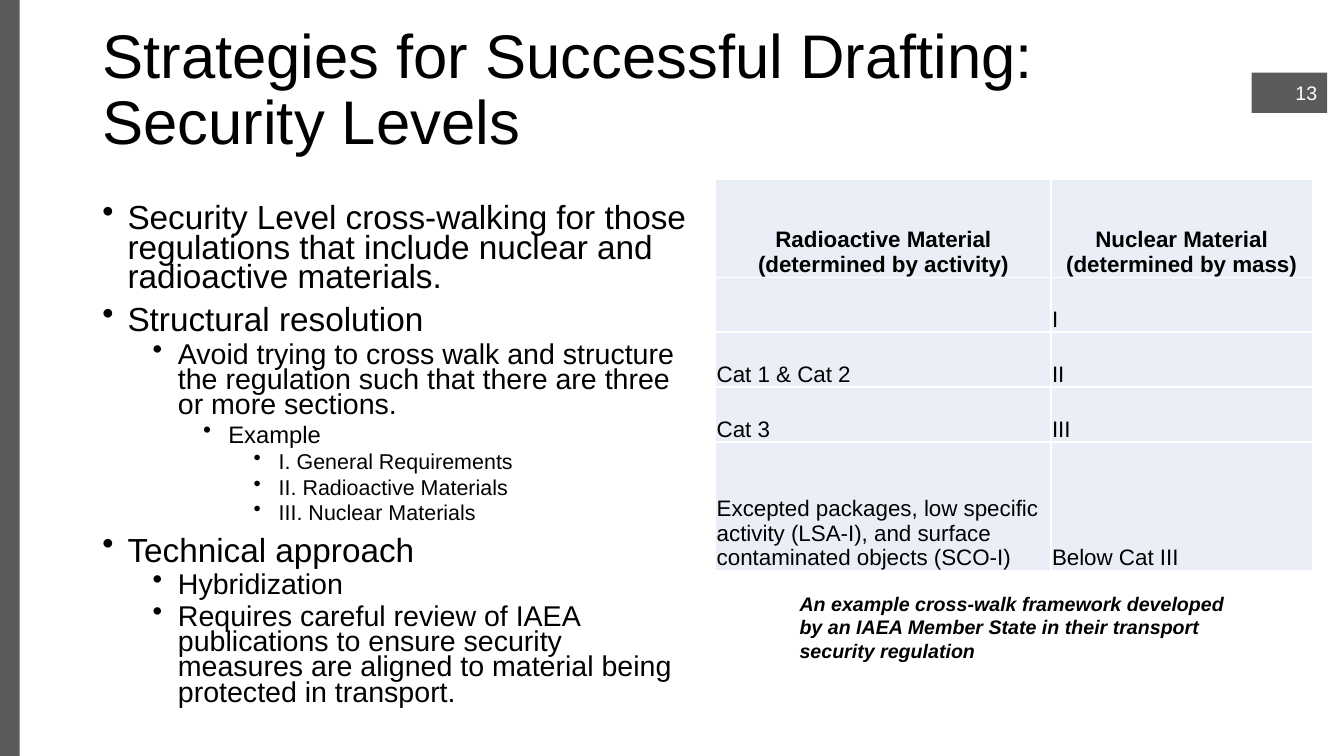
import pptx
import pptx.util
import pptx.dml.color
import pptx.enum.shapes
import pptx.enum.text
import pptx.oxml
import pptx.oxml.ns
from pptx.util import Pt

TITLE = "Strategies for Successful Drafting:\vSecurity Levels"
BULLETS = [
    (0, "Security Level cross-walking for those regulations that include nuclear and radioactive materials."),
    (0, "Structural resolution"),
    (1, "Avoid trying to cross walk and structure the regulation such that there are three or more sections."),
    (2, "Example"),
    (3, "I. General Requirements"),
    (3, "II. Radioactive Materials"),
    (3, "III. Nuclear Materials"),
    (0, "Technical approach"),
    (1, "Hybridization"),
    (1, "Requires careful review of IAEA publications to ensure security measures "
        "are aligned to material being protected in transport."),
]
CROSSWALK = [
    ("Radioactive Material\n(determined by activity)", "Nuclear Material (determined by mass)"),
    ("", "I"),
    ("Cat 1 & Cat 2", "II"),
    ("Cat 3", "III"),
    ("Excepted packages, low specific activity (LSA-I), and surface contaminated objects (SCO-I)",
     "Below Cat III"),
]
CAPTION = ("An example cross-walk framework developed by an IAEA Member State "
           "in their transport security regulation")
PAGE_NUMBER = "13"

COLORS = {"text": "000000", "gray": "5B5B5B", "white": "FFFFFF", "cell": "EAEFF7"}
BULLET_SIZES = [23.8, 20.4, 17, 15.3]
COLUMN_WIDTHS = [239.5, 186.5]
ROW_HEIGHTS = [69.5, 39.25, 39.25, 39.25, 92]
SLIDE_WIDTH, SLIDE_HEIGHT = 960, 540
ALIGN = pptx.enum.text.PP_ALIGN
ANCHOR = pptx.enum.text.MSO_ANCHOR


def color(name):
    return pptx.dml.color.RGBColor.from_string(COLORS[name])


def set_all(target, values):
    for name, value in values.items():
        setattr(target, name, value)


def format_paragraph(paragraph, size, color_name="text", font=None, **values):
    set_all(paragraph, values)
    set_all(paragraph.font, {"name": "Arial", "size": Pt(size), **(font or {})})
    paragraph.font.color.rgb = color(color_name)


def place(shape, left, top, width, height):
    set_all(shape, {"left": Pt(left), "top": Pt(top), "width": Pt(width), "height": Pt(height)})


def add_gray_box(slide, left, top, width, height):
    box = slide.shapes.add_shape(pptx.enum.shapes.MSO_SHAPE.RECTANGLE,
                                 Pt(left), Pt(top), Pt(width), Pt(height))
    box.shadow.inherit = False
    box.fill.solid()
    box.fill.fore_color.rgb = color("gray")
    box.line.fill.background()
    return box


def add_text_box(slide, left, top, width, height):
    frame = slide.shapes.add_textbox(Pt(left), Pt(top), Pt(width), Pt(height)).text_frame
    frame.word_wrap = True
    return frame


def add_bullets(slide):
    frame = add_text_box(slide, 66, 144, 436.5, 378.5)
    for index, (level, text) in enumerate(BULLETS):
        paragraph = frame.paragraphs[0] if index == 0 else frame.add_paragraph()
        paragraph.text = text
        properties = paragraph._p.get_or_add_pPr()
        properties.set("marL", str(Pt(18 + 36 * level)))
        properties.set("indent", str(Pt(-18)))
        properties.append(pptx.oxml.parse_xml(
            f'<a:buChar {pptx.oxml.ns.nsdecls("a")} char="•"/>'))
        space = 0 if index == 0 else 10 if level == 0 else 5
        format_paragraph(paragraph, BULLET_SIZES[level], level=level,
                         line_spacing=0.73, space_before=Pt(space))


def add_cell_borders(cell):
    properties = cell._tc.get_or_add_tcPr()
    for index, side in enumerate(("lnL", "lnR", "lnT", "lnB")):
        properties.insert(index, pptx.oxml.parse_xml(
            f'<a:{side} {pptx.oxml.ns.nsdecls("a")} w="{Pt(1)}"><a:solidFill>'
            f'<a:srgbClr val="{COLORS["white"]}"/></a:solidFill></a:{side}>'))


def add_crosswalk(slide):
    table = slide.shapes.add_table(
        len(CROSSWALK), len(COLUMN_WIDTHS), Pt(511.25), Pt(128.5),
        Pt(sum(COLUMN_WIDTHS)), Pt(sum(ROW_HEIGHTS))).table
    for column, width in zip(table.columns, COLUMN_WIDTHS):
        column.width = Pt(width)
    for row_index, (row, texts) in enumerate(zip(table.rows, CROSSWALK)):
        row.height = Pt(ROW_HEIGHTS[row_index])
        header = row_index == 0
        for cell, text in zip(row.cells, texts):
            cell.text = text
            set_all(cell, {"vertical_anchor": ANCHOR.BOTTOM, "margin_left": Pt(0.7),
                           "margin_right": Pt(0.7), "margin_top": Pt(0.7), "margin_bottom": 0})
            cell.fill.solid()
            cell.fill.fore_color.rgb = color("cell")
            add_cell_borders(cell)
            for paragraph in cell.text_frame.paragraphs:
                format_paragraph(paragraph, 16, font={"bold": header},
                                 alignment=ALIGN.CENTER if header else ALIGN.LEFT)


def main():
    presentation = pptx.Presentation()
    set_all(presentation, {"slide_width": Pt(SLIDE_WIDTH), "slide_height": Pt(SLIDE_HEIGHT)})
    slide = presentation.slides.add_slide(presentation.slide_layouts[5])

    band_height = SLIDE_HEIGHT / 3
    for band in range(3):
        add_gray_box(slide, 0, band * band_height, 14, band_height)

    title = slide.shapes.title
    place(title, 66, 8.5, 726, 108)
    title.text_frame.text = TITLE
    set_all(title.text_frame, {"vertical_anchor": ANCHOR.BOTTOM, "word_wrap": True,
                               "auto_size": pptx.enum.text.MSO_AUTO_SIZE.NONE})
    format_paragraph(title.text_frame.paragraphs[0], 44, alignment=ALIGN.LEFT, line_spacing=0.9)

    add_bullets(slide)
    add_crosswalk(slide)

    caption = add_text_box(slide, 564, 419, 336, 58)
    caption.text = CAPTION
    format_paragraph(caption.paragraphs[0], 14, font={"bold": True, "italic": True})

    number_box = add_gray_box(slide, 894, 52, 54, 28.75)
    number_box.text_frame.text = PAGE_NUMBER
    number_box.text_frame.vertical_anchor = ANCHOR.MIDDLE
    format_paragraph(number_box.text_frame.paragraphs[0], 14, "white", alignment=ALIGN.RIGHT)

    presentation.save("out.pptx")


if __name__ == "__main__":
    main()
